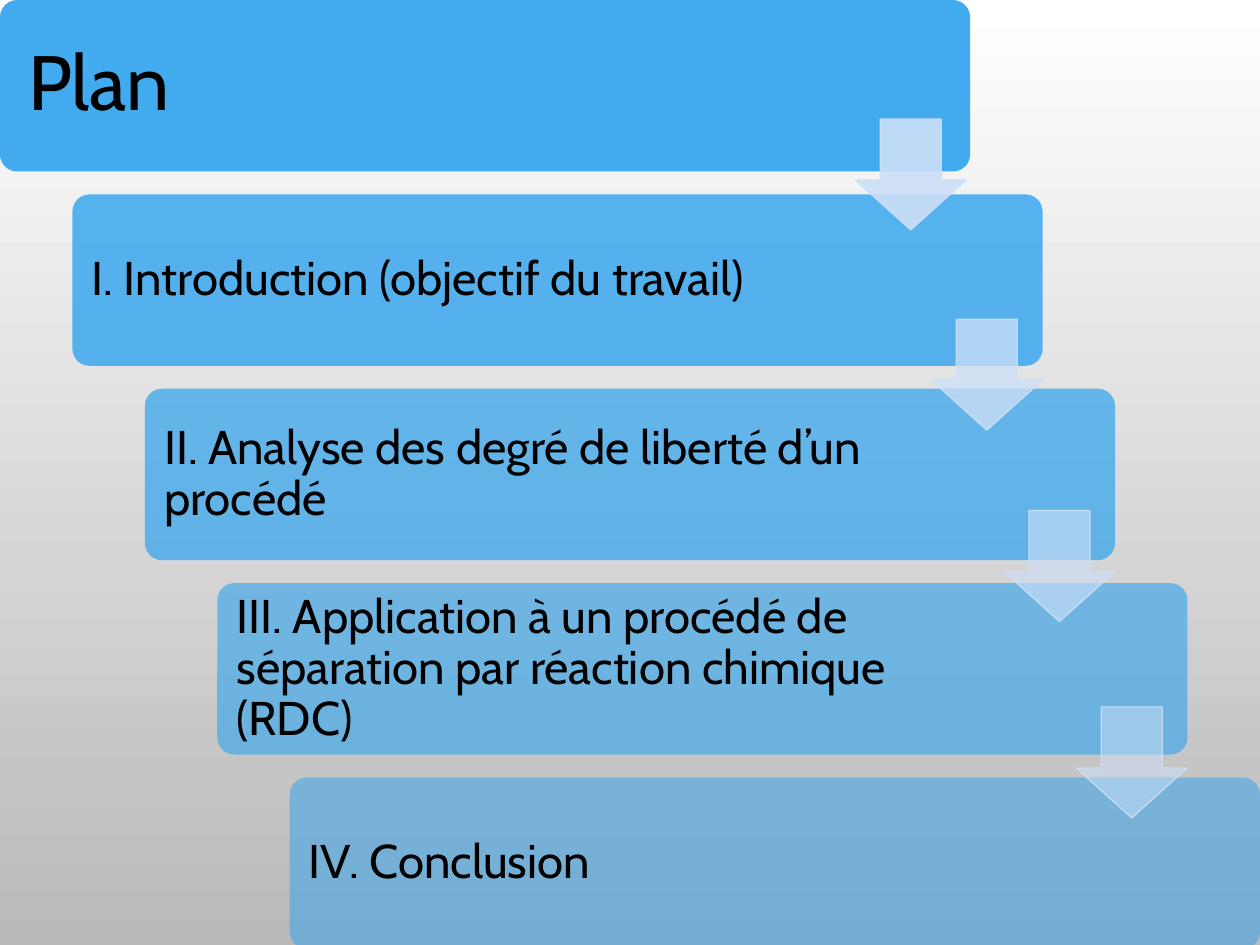
from dataclasses import dataclass

import lxml.etree
import pptx
import pptx.dml.color
import pptx.enum.shapes
import pptx.enum.text
import pptx.oxml.ns
import pptx.util
from pptx.util import Pt

WHITE = pptx.dml.color.RGBColor(0xFF, 0xFF, 0xFF)
GREY = pptx.dml.color.RGBColor(0xB9, 0xB9, 0xB9)
BLUE = pptx.dml.color.RGBColor(0x2F, 0xA3, 0xEE)
PALE_BLUE = pptx.dml.color.RGBColor(0xCD, 0xE0, 0xF8)
BLACK = pptx.dml.color.RGBColor(0, 0, 0)

FONT = "Cabin"
STEP_WIDTH, STEP_HEIGHT = 554.4, 98
STEP_SHIFT, STEP_DROP = 41.4, 111.06
TEXT_OFFSET = 2.87
ARROW_SIZE = 63.4
ARROW_OPACITY_DROP = 40 / 3


@dataclass
class Step:
    heading: str
    size: float = 27
    inset: float = 8.1
    text_width: float = 443.5


@dataclass
class Arrow:
    left: float
    top: float


STEPS = [
    Step("Plan", size=44, inset=13.2, text_width=438),
    Step("I. Introduction (objectif du travail)"),
    Step("II. Analyse des degré de liberté d’un procédé"),
    Step("III. Application à un procédé de séparation par réaction chimique (RDC)"),
    Step("IV. Conclusion"),
]
ARROWS = [Arrow(488.7, 68), Arrow(532.2, 182.4), Arrow(573.7, 291.7), Arrow(615, 404)]


def set_opacities(shape, *opacities: float) -> None:
    colours = shape.element.spPr.iter(pptx.oxml.ns.qn("a:srgbClr"))
    for colour, opacity in zip(list(colours), opacities):
        alpha = lxml.etree.SubElement(colour, pptx.oxml.ns.qn("a:alpha"))
        alpha.set("val", str(round(opacity * 1000)))


def place(shape, left: float, top: float, width: float, height: float) -> None:
    shape.left, shape.top = Pt(left), Pt(top)
    shape.width, shape.height = Pt(width), Pt(height)


def write_text(shape, text: str, *, size: float, inset: float) -> None:
    frame = shape.text_frame
    frame.word_wrap = True
    frame.auto_size = pptx.enum.text.MSO_AUTO_SIZE.NONE
    frame.vertical_anchor = pptx.enum.text.MSO_ANCHOR.MIDDLE
    frame.margin_left = frame.margin_right = Pt(inset)
    frame.margin_top = frame.margin_bottom = Pt(inset)
    paragraph = frame.paragraphs[0]
    paragraph.alignment = pptx.enum.text.PP_ALIGN.LEFT
    paragraph.line_spacing = 0.9
    run = paragraph.add_run()
    run.text = text
    run.font.name = FONT
    run.font.size = Pt(size)
    run.font.color.rgb = BLACK


def draw_step(slide, index: int, step: Step) -> None:
    left, top = index * STEP_SHIFT, index * STEP_DROP
    card = slide.shapes.add_shape(
        pptx.enum.shapes.MSO_SHAPE.ROUNDED_RECTANGLE,
        Pt(left), Pt(top), Pt(STEP_WIDTH), Pt(STEP_HEIGHT),
    )
    card.adjustments[0] = 0.1
    card.shadow.inherit = False
    card.fill.solid()
    card.fill.fore_color.rgb = BLUE
    card.line.fill.background()
    set_opacities(card, 90 - 10 * index)

    if index == 0:
        label = slide.shapes.title
        card.element.addnext(label.element)
    else:
        label = slide.shapes.add_textbox(0, 0, 0, 0)
    place(label, left + TEXT_OFFSET, top + TEXT_OFFSET,
          step.text_width, STEP_HEIGHT - 2 * TEXT_OFFSET)
    write_text(label, step.heading, size=step.size, inset=step.inset)


def draw_arrow(slide, index: int, arrow: Arrow) -> None:
    shape = slide.shapes.add_shape(
        pptx.enum.shapes.MSO_SHAPE.DOWN_ARROW,
        Pt(arrow.left), Pt(arrow.top), Pt(ARROW_SIZE), Pt(ARROW_SIZE),
    )
    shape.adjustments[0] = 0.55
    shape.adjustments[1] = 0.45
    shape.shadow.inherit = False
    shape.fill.solid()
    shape.fill.fore_color.rgb = PALE_BLUE
    shape.line.color.rgb = PALE_BLUE
    shape.line.width = Pt(0.75)
    set_opacities(shape, 90 - ARROW_OPACITY_DROP * index, 90)


def main() -> None:
    presentation = pptx.Presentation()
    presentation.slide_width, presentation.slide_height = Pt(720), Pt(540)
    slide = presentation.slides.add_slide(presentation.slide_layouts[5])

    backdrop = slide.background.fill
    backdrop.gradient()
    backdrop.gradient_angle = 270
    for stop, colour in zip(backdrop.gradient_stops, (WHITE, GREY)):
        stop.color.rgb = colour

    for index, step in enumerate(STEPS):
        draw_step(slide, index, step)
    for index, arrow in enumerate(ARROWS):
        draw_arrow(slide, index, arrow)

    presentation.save("out.pptx")


if __name__ == "__main__":
    main()
